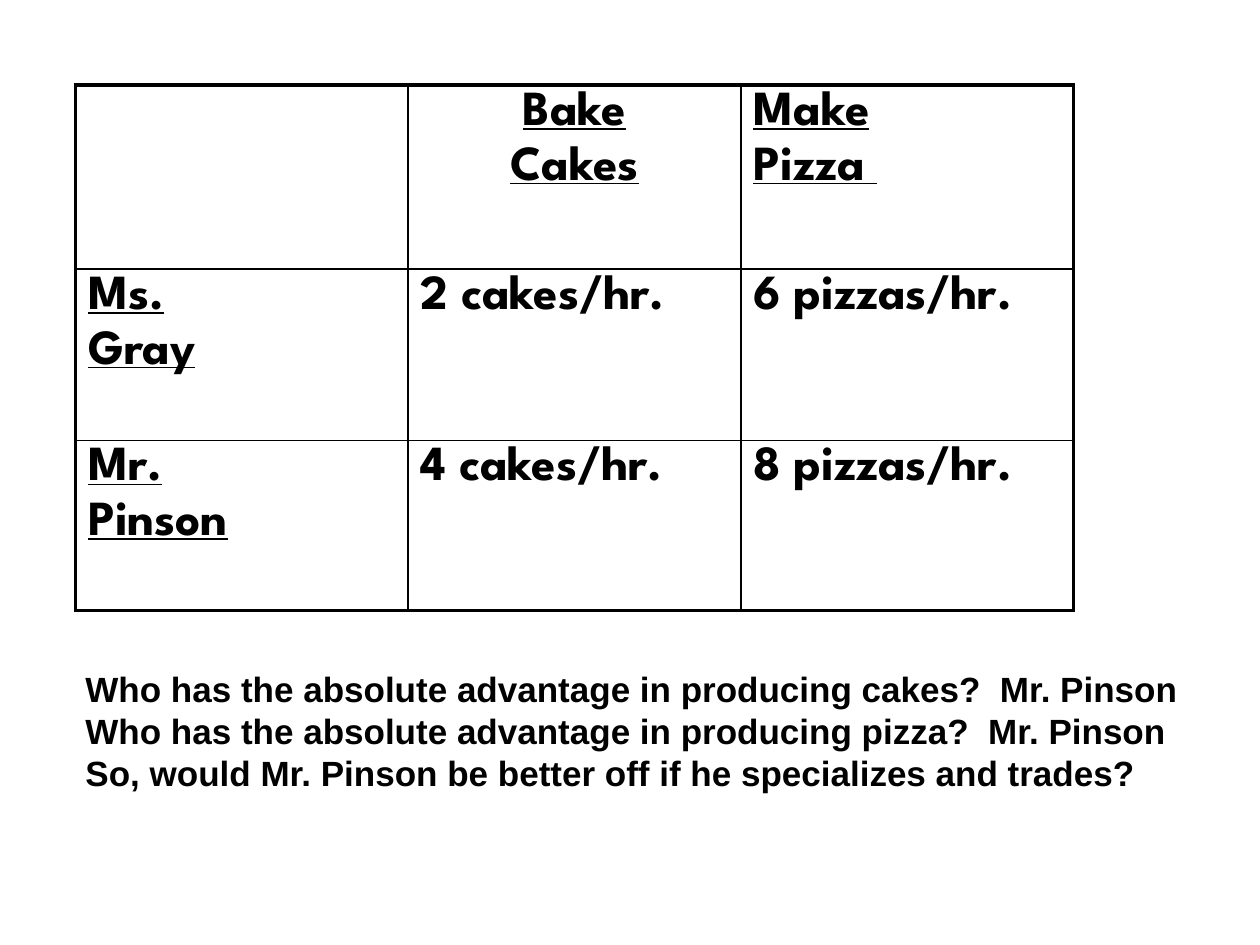
from lxml import etree
from pptx import Presentation
from pptx.dml.color import RGBColor as Rgb
from pptx.enum.text import MSO_AUTO_SIZE as Fit, PP_ALIGN as Align
from pptx.oxml.ns import qn
from pptx.util import Inches, Pt

COLORS = {"ink": "000000"}
INK = Rgb.from_string(COLORS["ink"])
THICK, THIN = 2.25, 1


def add_run(para, text, font, size, line=False):
    run = para.add_run()
    run.text = text
    run.font.name = font
    run.font.size = Pt(size)
    run.font.bold = True
    run.font.underline = line
    run.font.color.rgb = INK


def set_edges(cell, widths):
    """Draw the left, right, top and bottom borders, widths in points."""
    props = cell._tc.get_or_add_tcPr()
    for i, (side, width) in enumerate(zip("LRTB", widths)):
        edge = etree.Element(qn(f"a:ln{side}"), w=str(Pt(width)))
        fill = etree.SubElement(edge, qn("a:solidFill"))
        etree.SubElement(fill, qn("a:srgbClr"), val=COLORS["ink"])
        props.insert(i, edge)


deck = Presentation()
deck.slide_width, deck.slide_height = Inches(10), Inches(7.5)
wide, high = deck.slide_width, deck.slide_height
slide = deck.slides.add_slide(deck.slide_layouts[6])

# Output per hour: each cell is a list of lines
rates = [
    [[], ["Bake", "Cakes"], ["Make", "Pizza "]],
    [["Ms.", "Gray"], ["2 cakes/hr."], ["6 pizzas/hr."]],
    [["Mr.", "Pinson"], ["4 cakes/hr."], ["8 pizzas/hr."]],
]
rows = [1.46, 1.36, 1.35]
col = 2.64
last = len(rows) - 1

frame = slide.shapes.add_table(
    3, 3, int(wide * 0.06), int(high * 0.09), Inches(3 * col), Inches(sum(rows)))
table = frame.table
table.first_row = table.horz_banding = False
for c in range(3):
    table.columns[c].width = Inches(col)

for r, row in enumerate(rates):
    table.rows[r].height = Inches(rows[r])
    for c, lines in enumerate(row):
        cell = table.cell(r, c)
        cell.fill.background()
        ends = (c == 0, c == last, r == 0, r == last)
        set_edges(cell, [THICK if end else THIN for end in ends])
        for i, text in enumerate(lines):
            para = cell.text_frame.add_paragraph() if i else cell.text_frame.paragraphs[0]
            if i:
                para.space_before = Pt(5.6)
            para.alignment = Align.CENTER if (r, c) == (0, 1) else Align.LEFT
            add_run(para, text, "League Spartan", 28, r == 0 or c == 0)

# Questions under the table
asks = [
    "Who has the absolute advantage in producing cakes?  Mr. Pinson",
    "Who has the absolute advantage in producing pizza?  Mr. Pinson",
    "So, would Mr. Pinson be better off if he specializes and trades?",
]
box = slide.shapes.add_textbox(
    Inches(0.58), int(high * 0.7), int(wide * 0.9), Inches(1.11)).text_frame
box.word_wrap = True
box.auto_size = Fit.SHAPE_TO_FIT_TEXT
for i, text in enumerate(asks):
    para = box.add_paragraph() if i else box.paragraphs[0]
    add_run(para, text, "Arial", 20)

deck.save("out.pptx")
